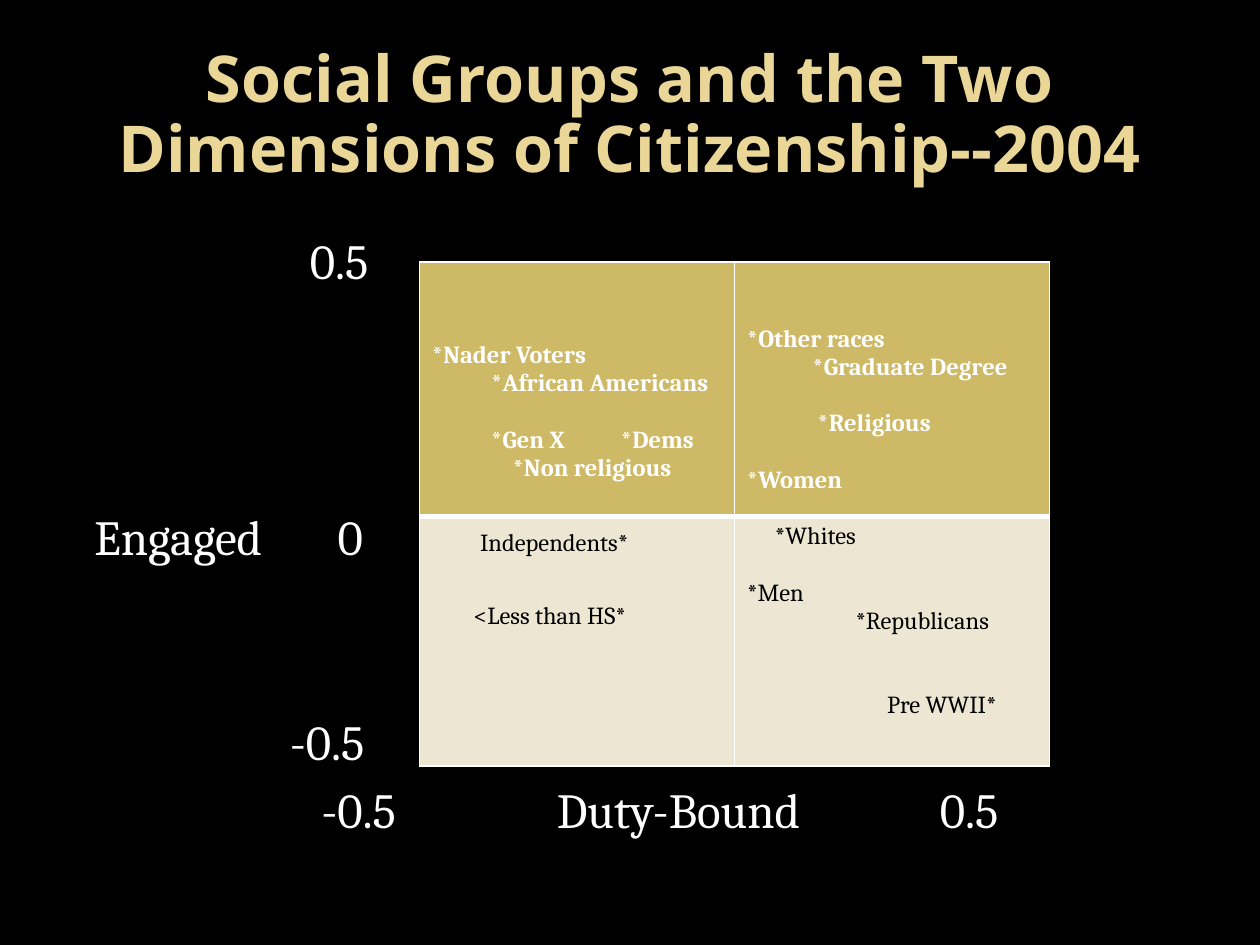
"""Build a slide that places social groups on the two dimensions of citizenship."""
from dataclasses import dataclass

from lxml import etree
from pptx import Presentation
from pptx import util as u
from pptx.dml.color import RGBColor
from pptx.enum import text
from pptx.oxml import ns


@dataclass(frozen=True)
class Theme:
    background: str = "000000"
    title: str = "EAD696"
    white: str = "FFFFFF"
    black: str = "000000"
    engaged_fill: str = "CEB966"
    passive_fill: str = "EDE6D3"
    title_font: str = "Noto Sans"
    body_font: str = "Cambria"
    title_size: float = 36.9
    label_size: float = 28
    group_size: float = 14
    line_pitch: float = 16.1


THEME = Theme()
WIDTH, HEIGHT = 10, 7.5
TITLE = "Social Groups and the Two Dimensions of Citizenship--2004"
TITLE_BOX = (0.5, 0.3, 9, 1.25)
TABLE_BOX = (3.33, 2.08, 5, 4)
ROW_HEIGHTS = (2.02, 1.98)
DEMS_TAB = 1.36
LABEL_HEIGHT = 0.5

# Each quadrant: top margin, then (blank lines before, indent, group).
QUADRANTS = [
    [
        (0.63, [(0, 0, "*Nader Voters"), (0, 0.47, "*African Americans"),
                (1, 0.47, "*Gen X\t*Dems"), (0, 0.64, "*Non religious")]),
        (0.5, [(0, 0, "*Other races"), (0, 0.52, "*Graduate Degree"),
               (1, 0.56, "*Religious"), (1, 0, "*Women")]),
    ],
    [
        (0.1, [(0, 0.38, "Independents*"), (1.6, 0.33, "<Less than HS*")]),
        (0.05, [(0, 0.22, "*Whites"), (1, 0, "*Men"),
                (0, 0.86, "*Republicans"), (2, 1.11, "Pre WWII*")]),
    ],
]

AXIS_ROWS = [
    (2.06, [(2.46, 0.5, "0.5")]),
    (4.25, [(0.75, 1.4, "Engaged"), (2.68, 0.3, "0")]),
    (5.88, [(2.3, 0.6, "-0.5")]),
    (6.42, [(2.55, 0.6, "-0.5"), (4.42, 2, "Duty-Bound"), (7.46, 0.5, "0.5")]),
]


def style(paragraph, font_name, size, color, bold=False):
    font = paragraph.font
    font.name, font.size, font.bold = font_name, u.Pt(size), bold
    font.color.rgb = RGBColor.from_string(color)


def add_title(slide):
    title = slide.shapes.title
    title.left, title.top, title.width, title.height = map(u.Inches, TITLE_BOX)
    title.text_frame.text = TITLE
    title.text_frame.vertical_anchor = text.MSO_ANCHOR.MIDDLE
    paragraph = title.text_frame.paragraphs[0]
    paragraph.alignment = text.PP_ALIGN.CENTER
    paragraph.line_spacing = 0.9
    style(paragraph, THEME.title_font, THEME.title_size, THEME.title, True)


def add_label(slide, left, middle, width, label):
    box = (left, middle - LABEL_HEIGHT / 2, width, LABEL_HEIGHT)
    frame = slide.shapes.add_textbox(*map(u.Inches, box)).text_frame
    frame.margin_left = frame.margin_right = frame.margin_top = frame.margin_bottom = 0
    frame.vertical_anchor = text.MSO_ANCHOR.MIDDLE
    frame.word_wrap = False
    frame.text = label
    style(frame.paragraphs[0], THEME.body_font, THEME.label_size, THEME.white)


def set_borders(cell, widths):
    properties = cell._tc.get_or_add_tcPr()
    for position, (side, width) in enumerate(widths.items()):
        line = etree.Element(ns.qn(f"a:{side}"), w=str(u.Pt(width)))
        fill = etree.SubElement(line, ns.qn("a:solidFill"))
        etree.SubElement(fill, ns.qn("a:srgbClr"), val=THEME.white)
        properties.insert(position, line)


def indent_first_line(paragraph, indent):
    properties = paragraph._p.get_or_add_pPr()
    properties.set("marL", "0")
    properties.set("indent", str(u.Inches(indent)))
    if "\t" in paragraph.text:
        stops = etree.SubElement(properties, ns.qn("a:tabLst"))
        etree.SubElement(stops, ns.qn("a:tab"), pos=str(u.Inches(DEMS_TAB)), algn="l")


def fill_quadrant(cell, margin, groups, engaged):
    cell.fill.solid()
    cell.fill.fore_color.rgb = RGBColor.from_string(
        THEME.engaged_fill if engaged else THEME.passive_fill)
    set_borders(cell, {"lnL": 1, "lnR": 1, "lnT": 1 if engaged else 3,
                       "lnB": 3 if engaged else 1})
    cell.margin_top = u.Inches(margin)
    frame = cell.text_frame
    frame.text = "\n".join(group for _, _, group in groups)
    for paragraph, (blank_lines, indent, _) in zip(frame.paragraphs, groups):
        paragraph.space_before = u.Pt(blank_lines * THEME.line_pitch)
        indent_first_line(paragraph, indent)
        style(paragraph, THEME.body_font, THEME.group_size,
              THEME.white if engaged else THEME.black, engaged)


def add_quadrants(slide):
    table = slide.shapes.add_table(2, 2, *map(u.Inches, TABLE_BOX)).table
    for row, (height, quadrants) in enumerate(zip(ROW_HEIGHTS, QUADRANTS)):
        table.rows[row].height = u.Inches(height)
        for column, (margin, groups) in enumerate(quadrants):
            fill_quadrant(table.cell(row, column), margin, groups, row == 0)


def main():
    presentation = Presentation()
    presentation.slide_width, presentation.slide_height = u.Inches(WIDTH), u.Inches(HEIGHT)
    slide = presentation.slides.add_slide(presentation.slide_layouts.get_by_name("Title Only"))
    slide.background.fill.solid()
    slide.background.fill.fore_color.rgb = RGBColor.from_string(THEME.background)
    add_title(slide)
    for middle, labels in AXIS_ROWS:
        for left, width, label in labels:
            add_label(slide, left, middle, width, label)
    add_quadrants(slide)
    presentation.save("out.pptx")


if __name__ == "__main__":
    main()
